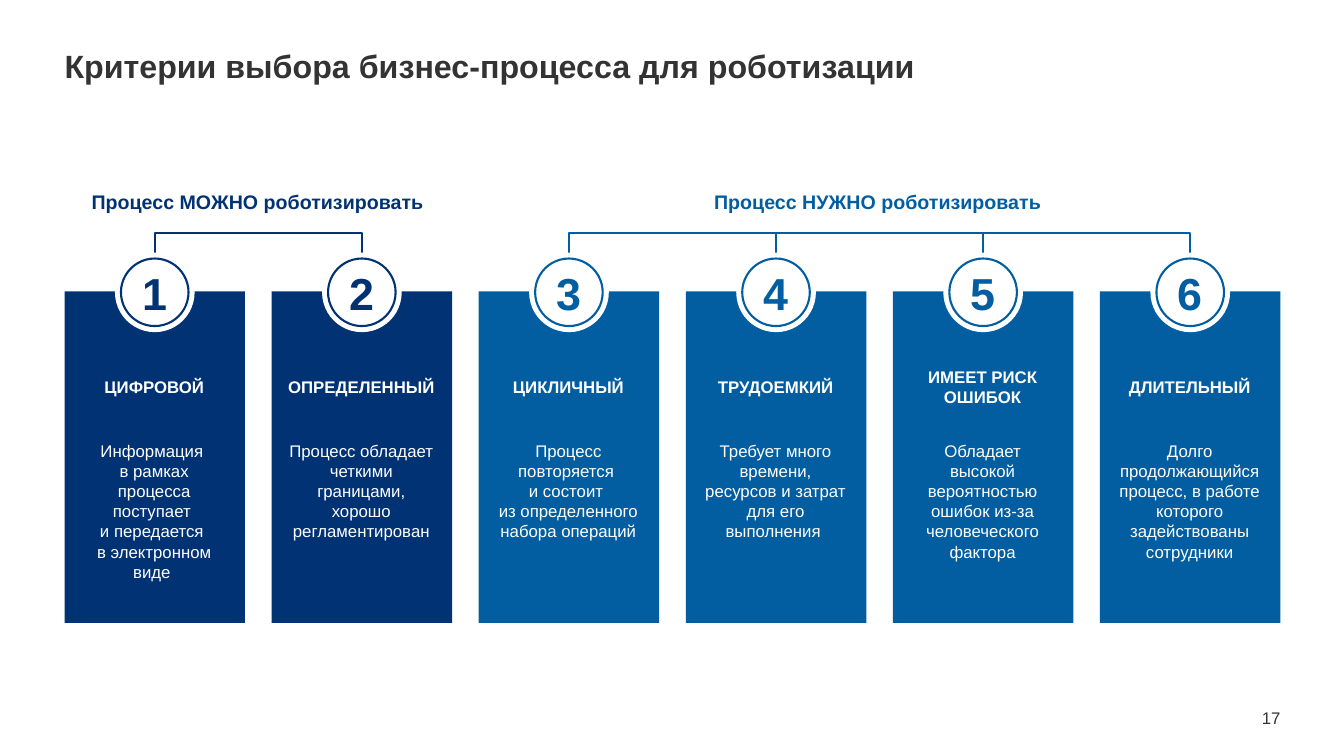
"""Build the slide on criteria for choosing a business process to robotize."""
from lxml import etree
from pptx import Presentation
from pptx.dml.color import RGBColor
from pptx.enum.shapes import MSO_CONNECTOR, MSO_SHAPE
from pptx.enum.text import MSO_ANCHOR as ANCHOR, MSO_AUTO_SIZE, PP_ALIGN as ALIGN
from pptx.oxml.ns import qn
from pptx.util import Inches, Pt

NAVY = RGBColor(0x00, 0x32, 0x74)
BLUE = RGBColor(0x02, 0x5E, 0xA1)
WHITE = RGBColor(0xFF, 0xFF, 0xFF)
GRAY = RGBColor(0x33, 0x33, 0x33)

CARD_LEFT, CARD_TOP, CARD_WIDTH, CARD_HEIGHT = 0.64, 2.89, 1.79, 3.29
CARD_STEP = (10.91 - CARD_LEFT) / 5
BADGE_MIDDLE, DISC, RING = 2.9, 0.79, 0.67
BRACKET_TOP, BRACKET_BOTTOM = 2.31, 2.56

CARDS = [
    ("ЦИФРОВОЙ", "Информация \nв рамках процесса поступает \nи передается \nв электронном виде "),
    ("ОПРЕДЕЛЕННЫЙ", "Процесс обладает четкими границами, хорошо регламентирован"),
    ("ЦИКЛИЧНЫЙ", "Процесс повторяется \nи состоит \nиз определенного набора операций"),
    ("ТРУДОЕМКИЙ", "Требует много времени, ресурсов и затрат для его выполнения "),
    ("ИМЕЕТ РИСК ОШИБОК", "Обладает высокой вероятностью ошибок из-за человеческого фактора"),
    ("ДЛИТЕЛЬНЫЙ", "Долго продолжающийся процесс, в работе которого задействованы сотрудники"),
]
GROUPS = [
    ("Процесс МОЖНО роботизировать", NAVY, 0, 1, 0.88, 3.35),
    ("Процесс НУЖНО роботизировать", BLUE, 2, 5, 6.96, 3.49),
]


def write(holder, text, size, color, bold=False, align=ALIGN.CENTER,
          anchor=ANCHOR.MIDDLE, insets=(0, 0, 0, 0)):
    frame = holder.text_frame
    frame.auto_size = MSO_AUTO_SIZE.NONE
    frame.word_wrap = True
    frame.vertical_anchor = anchor
    (frame.margin_left, frame.margin_top,
     frame.margin_right, frame.margin_bottom) = map(Inches, insets)
    paragraph = frame.paragraphs[0]
    paragraph.alignment = align
    for index, line in enumerate(text.split("\n")):
        if index:
            paragraph.add_line_break()
        run = paragraph.add_run()
        run.text = line
        run.font.name = "Arial"
        run.font.size = Pt(size)
        run.font.bold = bold
        run.font.color.rgb = color


def add_solid(kind, left, top, width, height, color):
    shape = slide.shapes.add_shape(
        kind, Inches(left), Inches(top), Inches(width), Inches(height))
    shape.shadow.inherit = False
    shape.fill.solid()
    shape.fill.fore_color.rgb = color
    shape.line.fill.background()
    return shape


prs = Presentation()
prs.slide_width, prs.slide_height = Inches(13.33), Inches(7.5)
slide = prs.slides.add_slide(prs.slide_layouts[5])

title = slide.shapes.title
title.left, title.top = Inches(0.64), Inches(0.32)
title.width, title.height = Inches(9.33), Inches(0.71)
write(title, "Критерии выбора бизнес-процесса для роботизации", 23, GRAY,
      bold=True, align=ALIGN.LEFT, insets=(0, 0, 0, 0.04))

page_number = slide.shapes.add_textbox(
    Inches(12.2), Inches(6.98), Inches(0.5), Inches(0.24))
write(page_number, "17", 12, GRAY, align=ALIGN.RIGHT, anchor=ANCHOR.BOTTOM)
page_number.text_frame.paragraphs[0].line_spacing = 0.9

centers = [CARD_LEFT + CARD_WIDTH / 2 + i * CARD_STEP for i in range(len(CARDS))]

for label, color, first, last, label_left, label_width in GROUPS:
    group_label = slide.shapes.add_textbox(
        Inches(label_left), Inches(1.88), Inches(label_width), Inches(0.28))
    write(group_label, label, 14, color, bold=True, anchor=ANCHOR.TOP)

    outline = slide.shapes.build_freeform(
        Inches(centers[first]), Inches(BRACKET_BOTTOM))
    outline.add_line_segments(
        [(Inches(centers[first]), Inches(BRACKET_TOP)),
         (Inches(centers[last]), Inches(BRACKET_TOP)),
         (Inches(centers[last]), Inches(BRACKET_BOTTOM))], close=False)
    bracket = outline.convert_to_shape()
    bracket.shadow.inherit = False
    bracket.fill.background()
    bracket.line.color.rgb = color
    bracket.line.width = Pt(1.5)

    for center in centers[first + 1:last]:
        drop = slide.shapes.add_connector(
            MSO_CONNECTOR.STRAIGHT, Inches(center), Inches(BRACKET_TOP),
            Inches(center), Inches(BRACKET_BOTTOM))
        drop.line.color.rgb = color
        drop.line.width = Pt(1.5)
        etree.SubElement(drop._element.spPr, qn("a:effectLst"))

    for index in range(first, last + 1):
        heading, description = CARDS[index]
        center = centers[index]
        add_solid(MSO_SHAPE.RECTANGLE, center - CARD_WIDTH / 2, CARD_TOP,
                  CARD_WIDTH, CARD_HEIGHT, color)
        add_solid(MSO_SHAPE.OVAL, center - DISC / 2, BADGE_MIDDLE - DISC / 2,
                  DISC, DISC, WHITE)
        ring = add_solid(MSO_SHAPE.OVAL, center - RING / 2,
                         BADGE_MIDDLE - RING / 2, RING, RING, WHITE)
        ring.line.color.rgb = color
        ring.line.width = Pt(1.5)
        write(ring, str(index + 1), 32, color, bold=True)

        heading_box = slide.shapes.add_textbox(
            Inches(center - 0.86), Inches(3.59), Inches(1.71), Inches(0.5))
        write(heading_box, heading, 12, WHITE, bold=True,
              insets=(0.1, 0.05, 0.1, 0.05))
        description_box = slide.shapes.add_textbox(
            Inches(center - 0.82), Inches(4.33), Inches(1.63), Inches(1.5))
        write(description_box, description, 12, WHITE, anchor=ANCHOR.TOP,
              insets=(0.09, 0.04, 0.09, 0.04))

prs.save("out.pptx")
